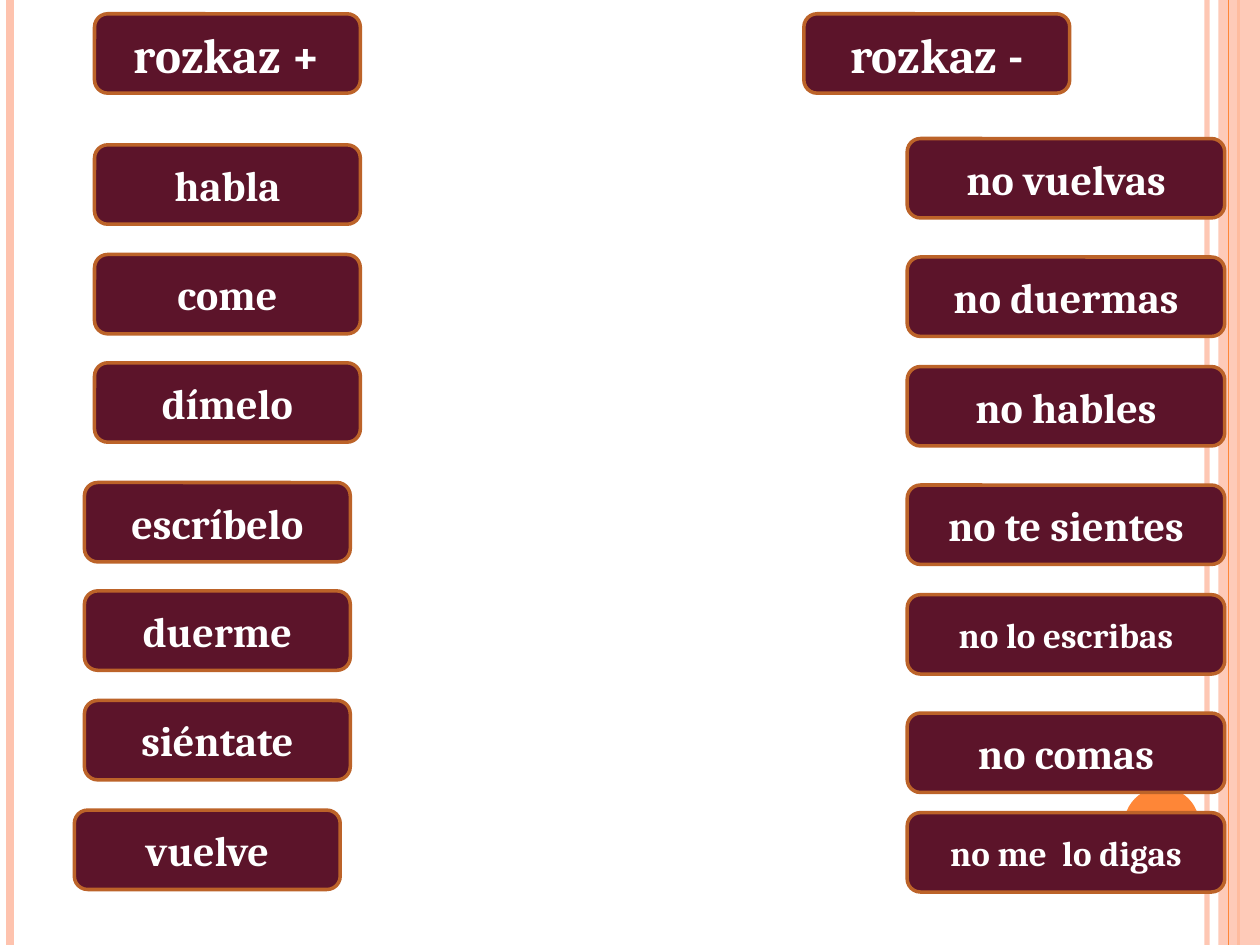
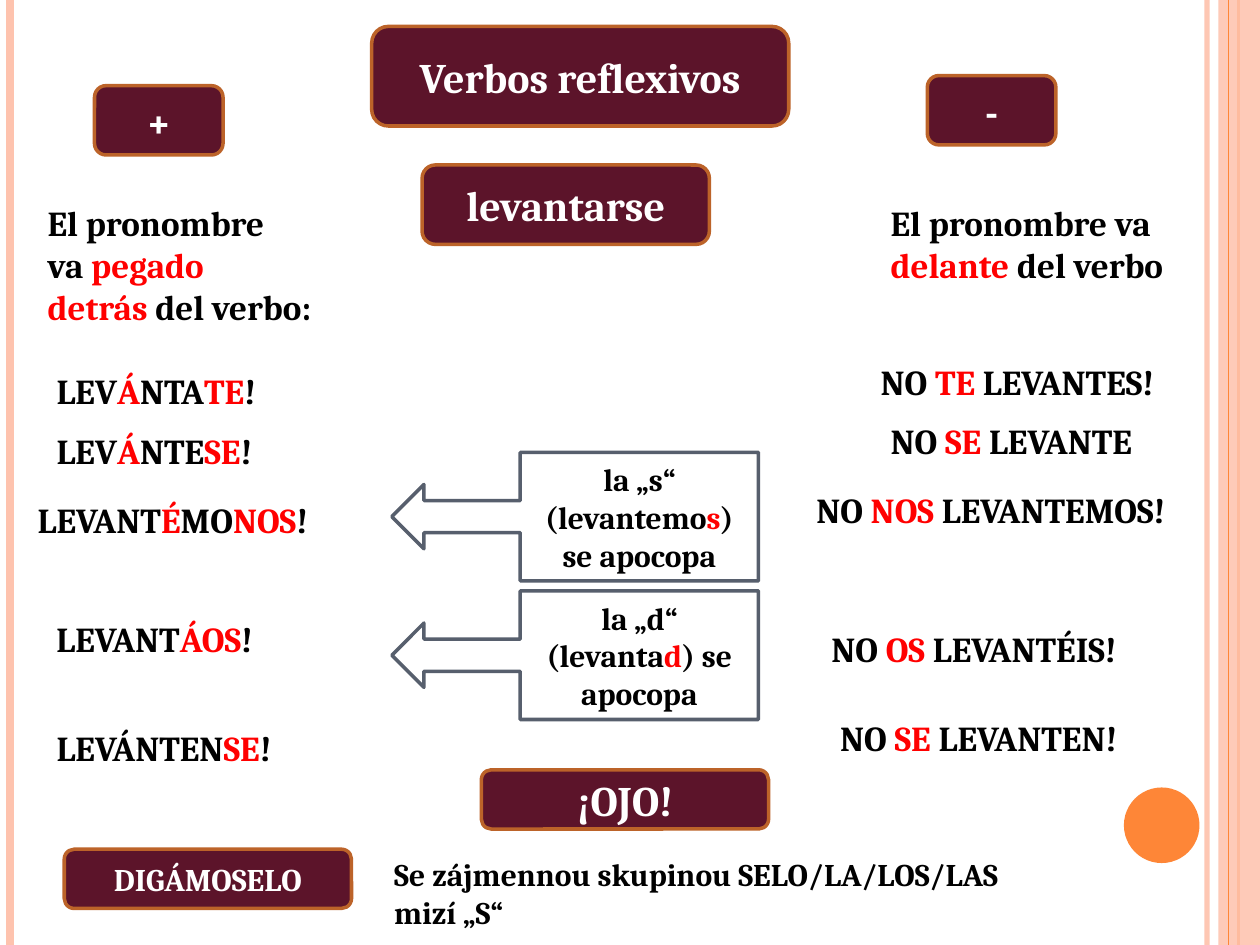
from dataclasses import dataclass

from lxml.etree import SubElement
from pptx import Presentation
from pptx.dml.color import RGBColor
from pptx.enum.shapes import MSO_CONNECTOR, MSO_SHAPE
from pptx.enum.text import MSO_ANCHOR, MSO_AUTO_SIZE, PP_ALIGN
from pptx.oxml.ns import qn
from pptx.util import Pt

PX = 9144
WIDTH, HEIGHT = 1000, 750
FONT = "Cambria"
COLORS = {
    "white": "FFFFFF",
    "black": "000000",
    "red": "FF0000",
    "wine": "5C142A",
    "copper": "BC6329",
    "slate": "575F6D",
    "peach": "FEC3AE",
    "orange": "FE8637",
}


@dataclass(frozen=True)
class Rule:
    x: int
    color: str
    weight: float
    opacity: int = 100


@dataclass(frozen=True)
class Box:
    text: str
    x: int
    y: int
    w: int
    h: int
    size: int = 24


@dataclass(frozen=True)
class Note:
    text: str
    x: int
    y: int
    w: int
    h: int = 44
    size: int = 20
    wrap: bool = False


RULES = [
    Rule(958, "peach", 3, 93),
    Rule(8, "peach", 4.5),
    Rule(983, "orange", 1.5),
    Rule(975, "orange", 0.75),
]

COMMAND_HEADINGS = [
    Box("rozkaz +", 75, 11, 211, 63, 28),
    Box("rozkaz -", 638, 11, 211, 63, 28),
]
POSITIVE_COMMANDS = [
    ("habla", 75, 115),
    ("come", 75, 202),
    ("dímelo", 75, 288),
    ("escríbelo", 67, 383),
    ("duerme", 67, 469),
    ("siéntate", 67, 556),
    ("vuelve", 59, 643),
]
NEGATIVE_COMMANDS = [
    ("no vuelvas", 110, 24),
    ("no duermas", 204, 24),
    ("no hables", 291, 24),
    ("no te sientes", 385, 24),
    ("no lo escribas", 472, 20),
    ("no comas", 566, 24),
    ("no me  lo digas", 645, 20),
]

REFLEXIVE_BOXES = [
    Box("Verbos reflexivos", 295, 21, 331, 79),
    Box("levantarse", 335, 131, 228, 63),
    Box("+", 75, 68, 102, 55),
    Box("-", 736, 60, 102, 55),
    Box("¡OJO!", 382, 611, 228, 47),
    Box("DIGÁMOSELO", 51, 674, 228, 47, 18),
]
REFLEXIVE_NOTES = [
    Note("El pronombre\nva *pegado*\n*detrás *del verbo:", 28, 155, 240, 111),
    Note("El pronombre va\n*delante *del verbo", 697, 155, 247, 77),
    Note("LEV*Á*NTA*TE*!", 35, 288, 202),
    Note("NO *TE* LEVANTES!", 689, 281, 279),
    Note("LEV*Á*NTE*SE*!", 35, 336, 201),
    Note("NO *SE* LEVANTE", 697, 328, 255),
    Note("LEVANT*É*MO*NOS*!", 20, 391, 279),
    Note("NO *NOS* LEVANTEMOS!", 638, 383, 362, wrap=True),
    Note("LEVANT*ÁOS*!", 35, 485, 530, wrap=True),
    Note("NO *OS* LEVANTÉIS!", 650, 493, 296),
    Note("LEVÁNTEN*SE*!", 35, 572, 225),
    Note("NO *SE* LEVANTEN!", 657, 564, 287),
    Note("Se zájmennou skupinou SELO/LA/LOS/LAS mizí „S“",
         303, 674, 530, 40, 18, True),
]
CALLOUTS = [
    Box("la „s“ (levantemo*s*) se apocopa", 311, 359, 291, 102, 18),
    Box("la „d“ (levanta*d*) se apocopa", 311, 469, 291, 102, 18),
]


def rgb(name: str) -> RGBColor:
    return RGBColor.from_string(COLORS[name])


def set_opacity(sp, percent: int) -> None:
    for color in sp._element.spPr.iter(qn("a:srgbClr")):
        SubElement(color, qn("a:alpha"), val=str(percent * 1000))


def write(tf, text: str, size: int, color: str, align: PP_ALIGN) -> None:
    for i, line in enumerate(text.split("\n")):
        p = tf.paragraphs[0] if i == 0 else tf.add_paragraph()
        p.alignment = align
        p.font.name, p.font.size, p.font.bold = FONT, Pt(size), True
        p.font.color.rgb = rgb(color)
        for j, part in enumerate(line.split("*")):
            if part:
                r = p.add_run()
                r.text = part
                if j % 2:
                    r.font.color.rgb = rgb("red")


def add_rule(s, rule: Rule) -> None:
    x = rule.x * PX
    cn = s.shapes.add_connector(MSO_CONNECTOR.STRAIGHT, x, 0, x, HEIGHT * PX)
    cn.line.color.rgb = rgb(rule.color)
    cn.line.width = Pt(rule.weight)
    if rule.opacity < 100:
        set_opacity(cn, rule.opacity)
    SubElement(cn._element.spPr, qn("a:effectLst"))


def add_filled(s, kind: MSO_SHAPE, x: int, y: int, w: int, h: int, fill: str):
    sp = s.shapes.add_shape(kind, x * PX, y * PX, w * PX, h * PX)
    sp.shadow.inherit = False
    sp.fill.solid()
    sp.fill.fore_color.rgb = rgb(fill)
    sp.line.fill.background()
    return sp


def add_box(s, box: Box, kind: MSO_SHAPE = MSO_SHAPE.ROUNDED_RECTANGLE,
            fill: str = "wine", line: str = "copper",
            color: str = "white") -> None:
    sp = add_filled(s, kind, box.x, box.y, box.w, box.h, fill)
    sp.line.color.rgb = rgb(line)
    sp.line.width = Pt(2)
    tf = sp.text_frame
    tf.word_wrap = True
    tf.vertical_anchor = MSO_ANCHOR.MIDDLE
    write(tf, box.text, box.size, color, PP_ALIGN.CENTER)


def add_note(s, note: Note) -> None:
    sp = s.shapes.add_textbox(note.x * PX, note.y * PX, note.w * PX, note.h * PX)
    tf = sp.text_frame
    tf.word_wrap = note.wrap
    tf.auto_size = MSO_AUTO_SIZE.SHAPE_TO_FIT_TEXT
    write(tf, note.text, note.size, "black", PP_ALIGN.LEFT)


def add_framed_slide(prs):
    s = prs.slides.add_slide(prs.slide_layouts[6])
    for rule in RULES[:3]:
        add_rule(s, rule)
    band = add_filled(s, MSO_SHAPE.RECTANGLE, 967, 0, 33, HEIGHT, "peach")
    set_opacity(band, 87)
    add_rule(s, RULES[3])
    add_filled(s, MSO_SHAPE.OVAL, 892, 625, 60, 60, "orange")
    return s


def build_commands(prs) -> None:
    s = add_framed_slide(prs)
    positive = [Box(text, x, y, 211, 63) for text, x, y in POSITIVE_COMMANDS]
    negative = [Box(text, 720, y, 252, 63, size)
                for text, y, size in NEGATIVE_COMMANDS]
    for box in COMMAND_HEADINGS + positive + negative:
        add_box(s, box)


def build_reflexives(prs) -> None:
    s = add_framed_slide(prs)
    for box in REFLEXIVE_BOXES:
        add_box(s, box)
    for note in REFLEXIVE_NOTES:
        add_note(s, note)
    for callout in CALLOUTS:
        add_box(s, callout, MSO_SHAPE.LEFT_ARROW_CALLOUT, "white", "slate", "black")


def main() -> None:
    prs = Presentation()
    prs.slide_width, prs.slide_height = WIDTH * PX, HEIGHT * PX
    build_commands(prs)
    build_reflexives(prs)
    prs.save("out.pptx")


if __name__ == "__main__":
    main()
